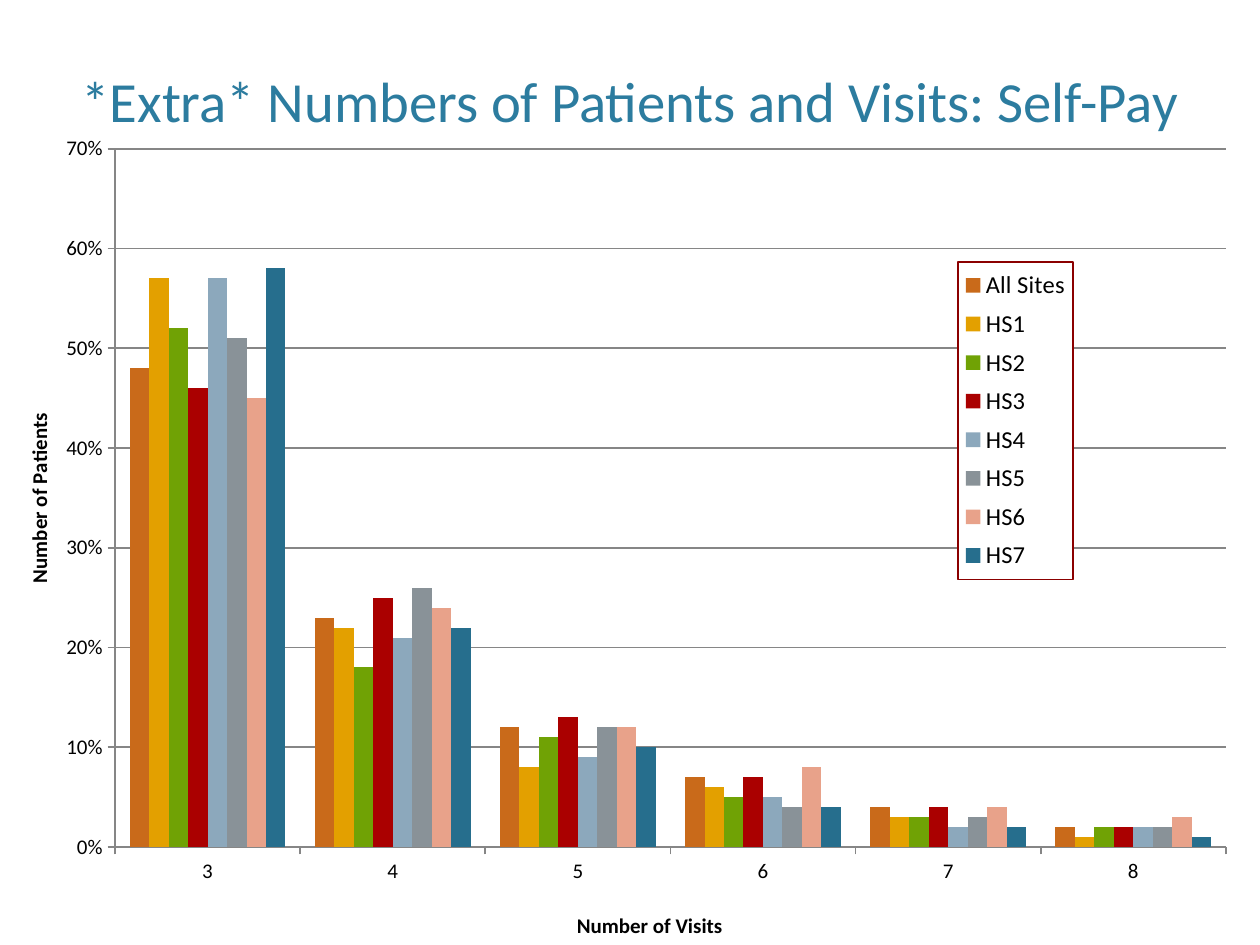
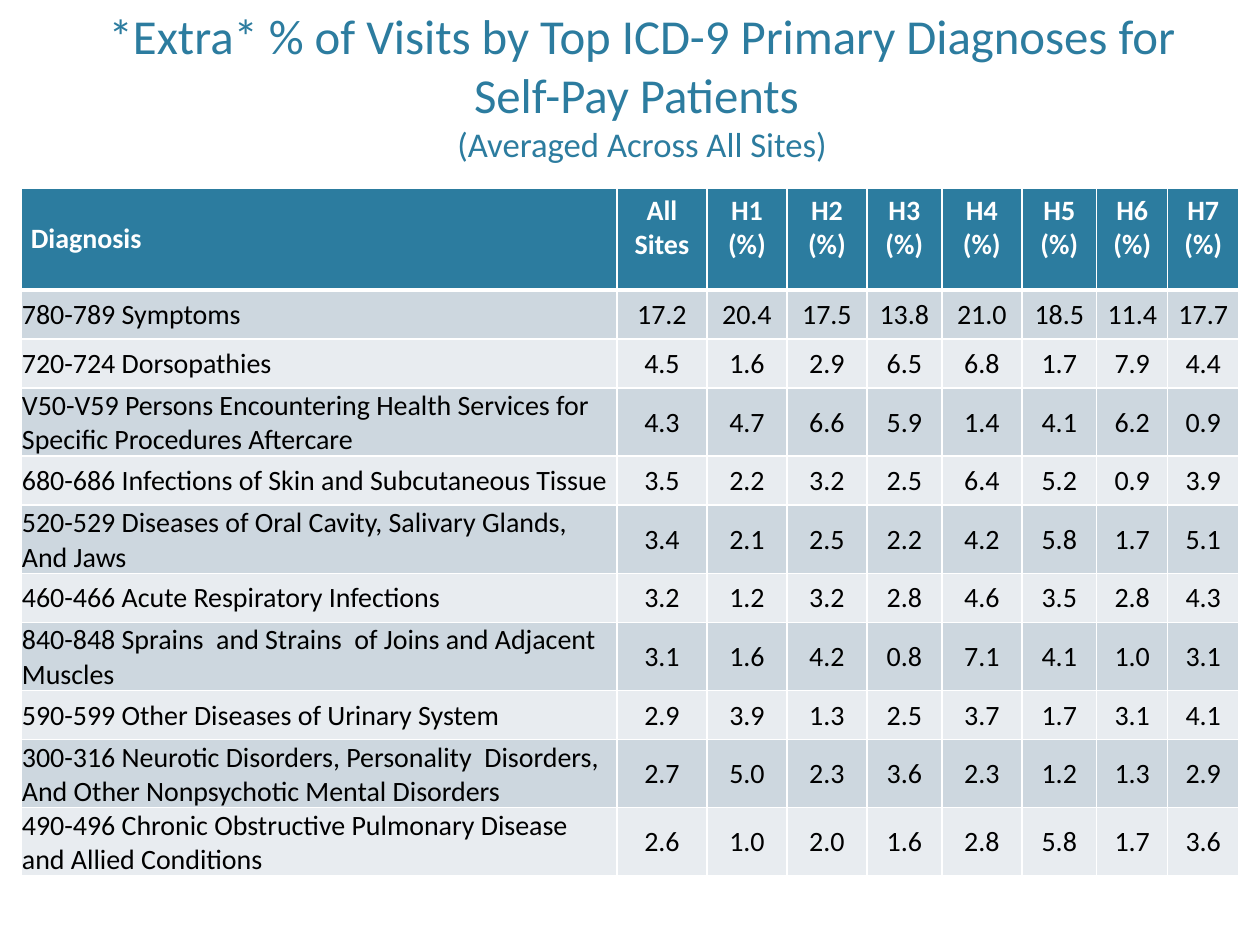
import dataclasses

import lxml.etree
import pptx
import pptx.chart.data
import pptx.dml.color
import pptx.enum.chart
import pptx.enum.text
import pptx.oxml
import pptx.oxml.ns
import pptx.util

EMU_PER_PX = 914400 / 126
qn = pptx.oxml.ns.qn


@dataclasses.dataclass(frozen=True)
class Theme:
    font: str = "Calibri"
    accent: str = "2C7C9F"
    text: str = "000000"
    paper: str = "FFFFFF"
    rule: str = "868686"
    legend_edge: str = "8B0000"
    bands: tuple = ("CDD7DF", "E8ECF0")
    series: tuple = ("C96A1A", "E3A000", "70A205", "AA0000",
                     "8CA8BC", "899298", "E8A28A", "266E8D")
    chart_title: float = 32.4
    table_title: float = 27.9
    subtitle: float = 19.8
    cell: float = 16
    axis: float = 12
    legend: float = 14


def px(length):
    return pptx.util.Emu(round(length * EMU_PER_PX))


def rgb(color):
    return pptx.dml.color.RGBColor.from_string(color)


def chart_xml(tag, body):
    return pptx.oxml.parse_xml(
        f'<c:{tag} {pptx.oxml.ns.nsdecls("c", "a")}>{body}</c:{tag}>')


class Deck:
    def __init__(self, theme, width, height):
        self.theme = theme
        self.presentation = pptx.Presentation()
        self.presentation.slide_width = px(width)
        self.presentation.slide_height = px(height)
        self.slide = None

    def new_slide(self):
        blank = self.presentation.slide_layouts[6]
        self.slide = self.presentation.slides.add_slide(blank)

    def style(self, font, size, color, bold=False):
        font.name = self.theme.font
        font.size = pptx.util.Pt(size)
        font.color.rgb = rgb(color)
        font.bold = bold

    def title(self, box, text, sizes):
        """Bottom-anchored heading; each line break starts the next type size."""
        frame = self.slide.shapes.add_textbox(*map(px, box)).text_frame
        frame.word_wrap = True
        frame.vertical_anchor = pptx.enum.text.MSO_ANCHOR.BOTTOM
        heading = frame.paragraphs[0]
        heading.text = text
        heading.alignment = pptx.enum.text.PP_ALIGN.CENTER
        for run, size in zip(heading.runs, sizes):
            self.style(run.font, size, self.theme.accent)

    # Chart
    def place(self, part, chart_box, position, inner=False):
        """Fix a chart part at a position in px from the chart's corner."""
        fields = {"layoutTarget": "inner"} if inner else {}
        fields |= {"xMode": "edge", "yMode": "edge"}
        for name, value, whole in zip("xywh", position, chart_box[2:] * 2):
            fields[name] = value / whole
        body = "".join(f'<c:{name} val="{value}"/>' for name, value in fields.items())
        layout = chart_xml("layout", f"<c:manualLayout>{body}</c:manualLayout>")
        for old in part.findall(qn("c:layout")):
            part.remove(old)
        overlay = part.find(qn("c:overlay"))
        if overlay is None:
            part.insert(0, layout)
        else:
            overlay.addprevious(layout)

    def axis(self, axis, caption, chart_box, position, rotation=0):
        axis.major_tick_mark = pptx.enum.chart.XL_TICK_MARK.OUTSIDE
        axis.minor_tick_mark = pptx.enum.chart.XL_TICK_MARK.NONE
        axis.format.line.color.rgb = rgb(self.theme.rule)
        axis.format.line.width = pptx.util.Pt(1)
        self.style(axis.tick_labels.font, self.theme.axis, self.theme.text)
        frame = axis.axis_title.text_frame
        frame.text = caption
        self.style(frame.paragraphs[0].runs[0].font, self.theme.axis,
                   self.theme.text, bold=True)
        frame._txBody.bodyPr.set("rot", str(rotation * 60000))
        frame._txBody.bodyPr.set("vert", "horz")
        self.place(axis.axis_title._element, chart_box, position)

    def legend(self, chart, chart_box, position):
        chart.has_legend = True
        legend = chart.legend
        legend.position = pptx.enum.chart.XL_LEGEND_POSITION.RIGHT
        legend.include_in_layout = True
        self.style(legend.font, self.theme.legend, self.theme.text)
        self.place(legend._element, chart_box, position)
        fill, edge = (f'<a:solidFill><a:srgbClr val="{color}"/></a:solidFill>'
                      for color in (self.theme.paper, self.theme.legend_edge))
        legend._element.find(qn("c:overlay")).addnext(
            chart_xml("spPr", f'{fill}<a:ln w="9525">{edge}</a:ln>'))

    def column_chart(self, box, categories, sites, plot_box, legend_box,
                     visits_title, patients_title):
        data = pptx.chart.data.CategoryChartData(number_format="0%")
        data.categories = categories
        for site, shares in sites.items():
            data.add_series(site, shares)
        chart = self.slide.shapes.add_chart(
            pptx.enum.chart.XL_CHART_TYPE.COLUMN_CLUSTERED,
            *map(px, box), data).chart
        chart.has_title = False
        self.style(chart.font, 10, self.theme.text)
        chart._chartSpace.find(qn("c:txPr")).addprevious(
            chart_xml("spPr", "<a:noFill/><a:ln><a:noFill/></a:ln>"))

        columns = chart.plots[0]
        columns.gap_width = 150
        columns.overlap = 0
        columns.vary_by_categories = False
        for series, color in zip(columns.series, self.theme.series):
            series.format.fill.solid()
            series.format.fill.fore_color.rgb = rgb(color)

        self.axis(chart.category_axis, *visits_title[:1], box, visits_title[1])
        patients = chart.value_axis
        self.axis(patients, *patients_title[:1], box, patients_title[1], rotation=-90)
        patients.minimum_scale = 0
        patients.maximum_scale = 0.7
        patients.major_unit = 0.1
        patients.tick_labels.number_format = "0%"
        patients.tick_labels.number_format_is_linked = False
        patients.has_major_gridlines = True
        patients.major_gridlines.format.line.color.rgb = rgb(self.theme.rule)
        patients.major_gridlines.format.line.width = pptx.util.Pt(1)
        self.place(chart._chartSpace.chart.plotArea, box, plot_box, inner=True)
        self.legend(chart, box, legend_box)

    # Table
    def borders(self, cell, top, bottom):
        """White rules round a cell; top and bottom widths in points."""
        properties = cell._tc.get_or_add_tcPr()
        for side, width in (("lnL", 1), ("lnR", 1), ("lnT", top), ("lnB", bottom)):
            line = lxml.etree.SubElement(properties, qn(f"a:{side}"),
                                         w=str(pptx.util.Pt(width)))
            fill = lxml.etree.SubElement(line, qn("a:solidFill"))
            lxml.etree.SubElement(fill, qn("a:srgbClr"), val=self.theme.paper)

    def cell(self, cell, text, row, column):
        header = row == 0
        self.borders(cell, 3 if row == 1 else 1, 3 if header else 1)
        cell.fill.solid()
        cell.fill.fore_color.rgb = rgb(
            self.theme.accent if header else self.theme.bands[(row - 1) % 2])
        cell.margin_left = cell.margin_right = px(10 if header else 1)
        cell.margin_top = px(6 if header else 1)
        cell.margin_bottom = px(6 if header else 0)
        anchor = pptx.enum.text.MSO_ANCHOR
        cell.vertical_anchor = anchor.TOP if header and column else anchor.MIDDLE
        paragraph = cell.text_frame.paragraphs[0]
        paragraph.text = text
        align = pptx.enum.text.PP_ALIGN
        paragraph.alignment = align.CENTER if column else align.LEFT
        self.style(paragraph.runs[0].font, self.theme.cell,
                   self.theme.paper if header else self.theme.text, bold=header)

    def table(self, left, top, widths, header_height, row_height, rows):
        height = header_height + row_height * (len(rows) - 1)
        table = self.slide.shapes.add_table(
            len(rows), len(widths), px(left), px(top),
            px(sum(widths)), px(height)).table
        table.horz_banding = False
        for column, width in zip(table.columns, widths):
            column.width = px(width)
        for r, texts in enumerate(rows):
            table.rows[r].height = px(row_height if r else header_height)
            for c, text in enumerate(texts):
                self.cell(table.cell(r, c), text, r, c)


VISITS = (3, 4, 5, 6, 7, 8)
PATIENT_SHARES = {
    "All Sites": (0.48, 0.23, 0.12, 0.07, 0.04, 0.02),
    "HS1": (0.57, 0.22, 0.08, 0.06, 0.03, 0.01),
    "HS2": (0.52, 0.18, 0.11, 0.05, 0.03, 0.02),
    "HS3": (0.46, 0.25, 0.13, 0.07, 0.04, 0.02),
    "HS4": (0.57, 0.21, 0.09, 0.05, 0.02, 0.02),
    "HS5": (0.51, 0.26, 0.12, 0.04, 0.03, 0.02),
    "HS6": (0.45, 0.24, 0.12, 0.08, 0.04, 0.03),
    "HS7": (0.58, 0.22, 0.10, 0.04, 0.02, 0.01),
}

# Diagnosis, then the percentages for all sites and H1 to H7
DIAGNOSES = (
    ("780-789 Symptoms", "17.2 20.4 17.5 13.8 21.0 18.5 11.4 17.7"),
    ("720-724 Dorsopathies", "4.5 1.6 2.9 6.5 6.8 1.7 7.9 4.4"),
    ("V50-V59 Persons Encountering Health Services for Specific Procedures Aftercare",
     "4.3 4.7 6.6 5.9 1.4 4.1 6.2 0.9"),
    ("680-686 Infections of Skin and Subcutaneous Tissue",
     "3.5 2.2 3.2 2.5 6.4 5.2 0.9 3.9"),
    ("520-529 Diseases of Oral Cavity, Salivary Glands, And Jaws",
     "3.4 2.1 2.5 2.2 4.2 5.8 1.7 5.1"),
    ("460-466 Acute Respiratory Infections", "3.2 1.2 3.2 2.8 4.6 3.5 2.8 4.3"),
    ("840-848 Sprains  and Strains  of Joins and Adjacent Muscles",
     "3.1 1.6 4.2 0.8 7.1 4.1 1.0 3.1"),
    ("590-599 Other Diseases of Urinary System", "2.9 3.9 1.3 2.5 3.7 1.7 3.1 4.1"),
    ("300-316 Neurotic Disorders, Personality  Disorders, "
     "And Other Nonpsychotic Mental Disorders", "2.7 5.0 2.3 3.6 2.3 1.2 1.3 2.9"),
    ("490-496 Chronic Obstructive Pulmonary Disease and Allied Conditions",
     "2.6 1.0 2.0 1.6 2.8 5.8 1.7 3.6"),
)


def main():
    theme = Theme()
    deck = Deck(theme, 1260, 945)

    # Slide 1: visits per patient
    deck.new_slide()
    deck.title((49, 30, 1162, 110),
               "*Extra* Numbers of Patients and Visits: Self-Pay", [theme.chart_title])
    deck.column_chart((0, 117, 1240, 828), VISITS, PATIENT_SHARES,
                      plot_box=(115, 32, 1111, 704),
                      legend_box=(958, 146, 115, 320),
                      visits_title=("Number of Visits", (573, 797)),
                      patients_title=("Number of Patients", (21, 296)))

    # Slide 2: diagnoses by site
    deck.new_slide()
    deck.title((84, 55, 1116, 116),
               "*Extra* % of Visits by Top ICD-9 Primary Diagnoses for "
               "Self-Pay Patients \v(Averaged Across All Sites)",
               [theme.table_title, theme.subtitle])
    header = ["Diagnosis", "All Sites"] + [f"H{site} (%)" for site in range(1, 8)]
    rows = [header] + [[name, *shares.split()] for name, shares in DIAGNOSES]
    deck.table(21, 188, (596, 90, 80, 80, 75, 80, 75, 71, 71), 102, 49, rows)

    deck.presentation.save("out.pptx")


if __name__ == "__main__":
    main()
